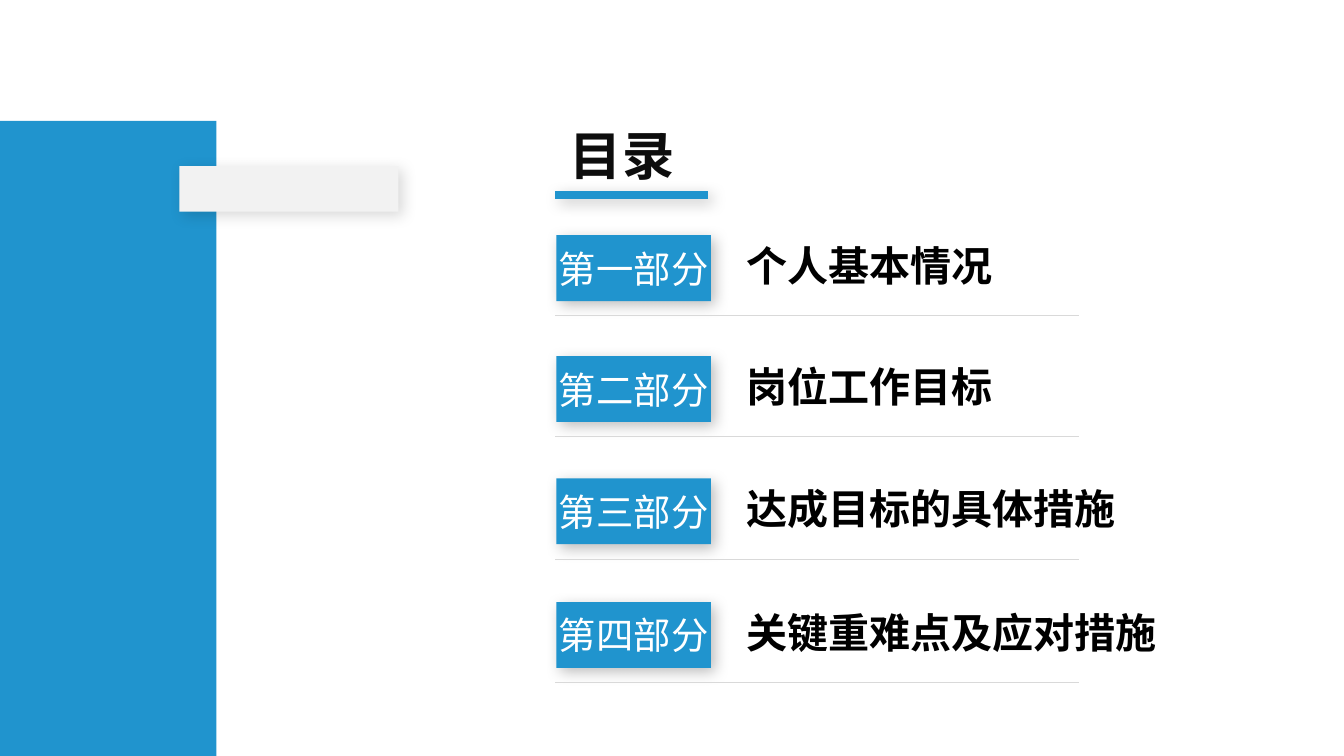
from lxml import etree
from pptx import Presentation
from pptx.dml.color import RGBColor
from pptx.enum.shapes import MSO_CONNECTOR as LINE, MSO_SHAPE as SHAPE
from pptx.enum.text import MSO_ANCHOR as ANCHOR, MSO_AUTO_SIZE as FIT, PP_ALIGN as ALIGN
from pptx.oxml import parse_xml
from pptx.oxml.ns import nsdecls, qn
from pptx.util import Inches, Pt

FONT = "Noto Sans CJK SC"
BLUE = "2094CE"


def write(part, text, size, color, bold=False, align=ALIGN.LEFT, anchor=ANCHOR.TOP,
          spacing=1.0, wrap=True, fit=FIT.SHAPE_TO_FIT_TEXT):
    frame = part.text_frame
    frame.word_wrap = wrap
    frame.auto_size = fit
    frame.vertical_anchor = anchor
    paragraph = frame.paragraphs[0]
    paragraph.alignment = align
    paragraph.line_spacing = spacing
    run = paragraph.add_run()
    run.text = text
    run.font.size = Pt(size)
    run.font.bold = bold
    run.font.name = FONT
    run.font.color.rgb = RGBColor.from_string(color)
    etree.SubElement(run.font._element, qn("a:ea")).set("typeface", FONT)


def paint(part, color, line_width=None, shadow=0):
    if line_width:
        part.line.color.rgb = RGBColor.from_string(color)
        part.line.width = Pt(line_width)
    else:
        part.fill.solid()
        part.fill.fore_color.rgb = RGBColor.from_string(color)
        part.line.fill.background()
        part.shadow.inherit = False
    properties = part._element.spPr
    for effects in properties.findall(qn("a:effectLst")):
        properties.remove(effects)
    outer = (
        f'<a:outerShdw blurRad="{Pt(8)}" dist="{Pt(3)}" dir="2700000" algn="tl" rotWithShape="0">'
        f'<a:srgbClr val="000000"><a:alpha val="{shadow * 1000}"/></a:srgbClr></a:outerShdw>'
    ) if shadow else ""
    properties.append(parse_xml(f'<a:effectLst {nsdecls("a")}>{outer}</a:effectLst>'))


deck = Presentation()
deck.slide_width = Inches(10)
deck.slide_height = deck.slide_width * 9 // 16
slide = deck.slides.add_slide(deck.slide_layouts[5])
shapes = slide.shapes

side_panel = shapes.add_shape(SHAPE.RECTANGLE, 0, Inches(0.9), Inches(1.61), Inches(4.74))
paint(side_panel, BLUE)
side_tab = shapes.add_shape(SHAPE.RECTANGLE, Inches(1.98), Inches(0.59), Inches(0.34), Inches(1.63))
side_tab.rotation = 270
paint(side_tab, "F2F2F2", shadow=15)

heading = shapes.title
heading.left, heading.top = Inches(4.14), Inches(0.87)
heading.width, heading.height = Inches(1.1), Inches(0.57)
write(heading, "目录", 28, "0D0D0D", bold=True, align=ALIGN.JUSTIFY)
underline = shapes.add_connector(LINE.STRAIGHT, Inches(4.13), Inches(1.45), Inches(5.27), Inches(1.45))
paint(underline, BLUE, line_width=4, shadow=25)

sections = [
    (1.75, "第一部分", "个人基本情况"),
    (2.65, "第二部分", "岗位工作目标"),
    (3.56, "第三部分", "达成目标的具体措施"),
    (4.48, "第四部分", "关键重难点及应对措施"),
]
for top, number, topic in sections:
    topic_box = shapes.add_textbox(Inches(5.46), Inches(top - 0.12), Inches(3.6), Inches(0.58))
    write(topic_box, topic, 22, "000000", bold=True, spacing=1.3)

    number_tag = shapes.add_shape(SHAPE.RECTANGLE, Inches(4.14), Inches(top), Inches(1.15), Inches(0.49))
    paint(number_tag, BLUE, shadow=25)
    write(number_tag, number, 20, "FFFFFF", align=ALIGN.CENTER, anchor=ANCHOR.MIDDLE,
          wrap=False, fit=FIT.NONE)

    rule_y = Inches(top + 0.6)
    divider = shapes.add_connector(LINE.STRAIGHT, Inches(4.13), rule_y, Inches(8.03), rule_y)
    paint(divider, "D9D9D9", line_width=0.5)

deck.save("out.pptx")
